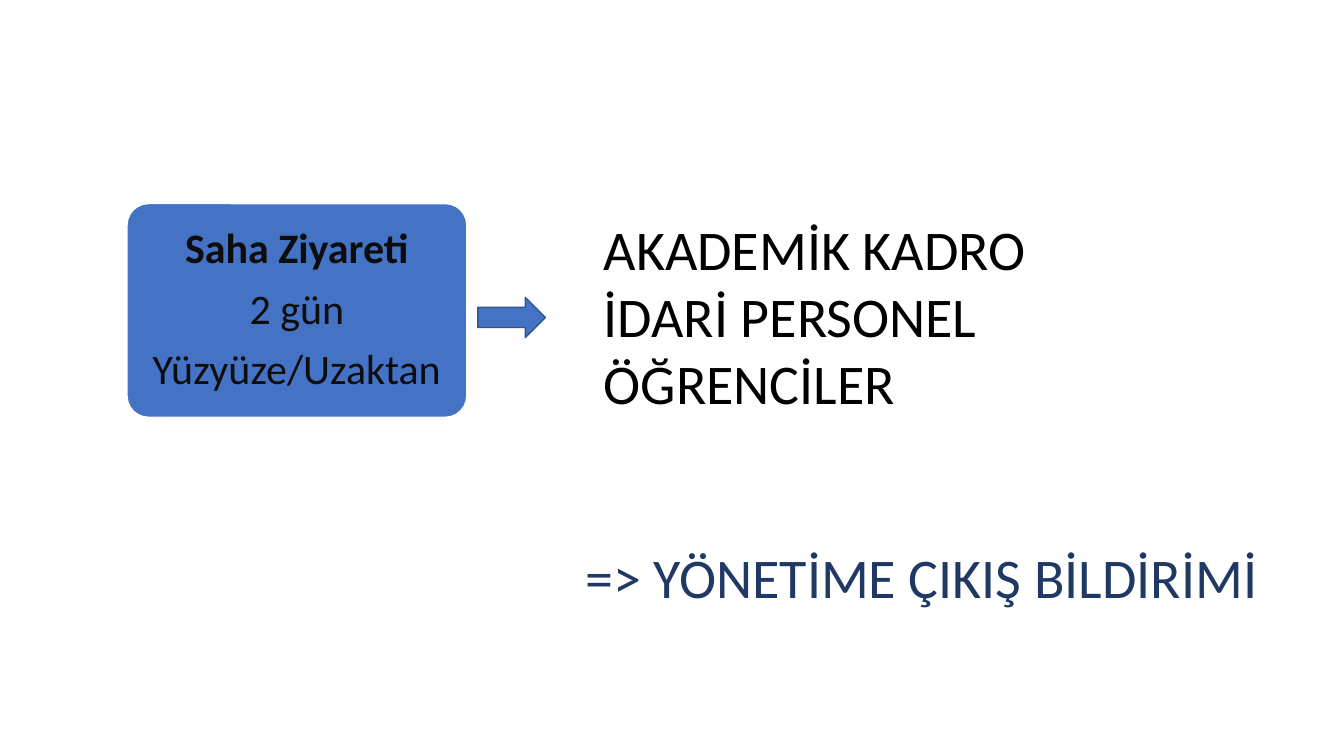
from pptx import Presentation
from pptx.dml.color import RGBColor
from pptx.enum.shapes import MSO_SHAPE
from pptx.enum.text import MSO_ANCHOR, MSO_AUTO_SIZE, PP_ALIGN
from pptx.util import Inches, Pt

ROUNDED = MSO_SHAPE.ROUNDED_RECTANGLE
ARROW = MSO_SHAPE.RIGHT_ARROW
MIDDLE = MSO_ANCHOR.MIDDLE
GROW = MSO_AUTO_SIZE.SHAPE_TO_FIT_TEXT
CENTER, LEFT = PP_ALIGN.CENTER, PP_ALIGN.LEFT

BLUE, BLUE_EDGE, NAVY = "4472C4", "325491", "203864"
WHITE, BLACK, NEAR_BLACK = "FFFFFF", "000000", "0D0D0D"


def color(code):
    return RGBColor.from_string(code)


def apply_format(target, values):
    for name, value in values.items():
        setattr(target, name, value)


class SlideBuilder:
    """Holds the style and the slide; places are percent of the slide's size."""

    font = "Calibri"
    line_width = Pt(1)

    def __init__(self, deck):
        self.deck = deck
        self.slide = deck.slides.add_slide(deck.slide_layouts[6])

    def place(self, left, top, width, height):
        across, down = self.deck.slide_width, self.deck.slide_height
        return [int(share * size / 100) for share, size in
                ((left, across), (top, down), (width, across), (height, down))]

    def shape(self, kind, place, line, adjustment=None):
        shape = self.slide.shapes.add_shape(kind, *self.place(*place))
        shape.shadow.inherit = False
        shape.fill.solid()
        shape.fill.fore_color.rgb = color(BLUE)
        shape.line.color.rgb = color(line)
        shape.line.width = self.line_width
        if adjustment is not None:
            shape.adjustments[0] = adjustment
        return shape

    def text_box(self, place, lines, size, ink):
        box = self.slide.shapes.add_textbox(*self.place(*place))
        apply_format(box.text_frame, {"word_wrap": True, "auto_size": GROW})
        self.fill_text(box, lines, size, ink, {"alignment": LEFT})

    def fill_text(self, box, lines, size, ink, para_format, bold_lines=0):
        """Fill the box with one paragraph a line, the first ones in bold."""
        frame = box.text_frame
        for index, line in enumerate(lines):
            para = frame.paragraphs[0] if index == 0 else frame.add_paragraph()
            apply_format(para, para_format)
            span = para.add_run()
            span.text = line
            apply_format(span.font, {"name": self.font, "size": Pt(size),
                                     "bold": index < bold_lines})
            span.font.color.rgb = color(ink)


def main():
    deck = Presentation()
    apply_format(deck, {"slide_width": Inches(13.33), "slide_height": Inches(7.5)})
    page = SlideBuilder(deck)

    visit = page.shape(ROUNDED, (9.45, 26.93, 25.28, 28.27), WHITE, 0.1)
    sides = ("left", "top", "right", "bottom")
    apply_format(visit.text_frame, {f"margin_{side}": Inches(0.18) for side in sides})
    apply_format(visit.text_frame, {"word_wrap": True, "vertical_anchor": MIDDLE})
    page.fill_text(visit, ["Saha Ziyareti", "2 gün", "Yüzyüze/Uzaktan"], 30, NEAR_BLACK,
                   {"alignment": CENTER, "line_spacing": 0.9, "space_after": Pt(10.5)},
                   bold_lines=1)

    page.text_box((44.18, 27.73, 52.35, 28.27),
                  ["AKADEMİK KADRO", "İDARİ PERSONEL", "ÖĞRENCİLER"], 40, BLACK)
    page.shape(ARROW, (35.55, 39.33, 5.03, 5.33), BLUE_EDGE)
    page.text_box((42.83, 71.07, 52.35, 10.27),
                  ["=> YÖNETİME ÇIKIŞ BİLDİRİMİ"], 40, NAVY)
    deck.save("out.pptx")


if __name__ == "__main__":
    main()
